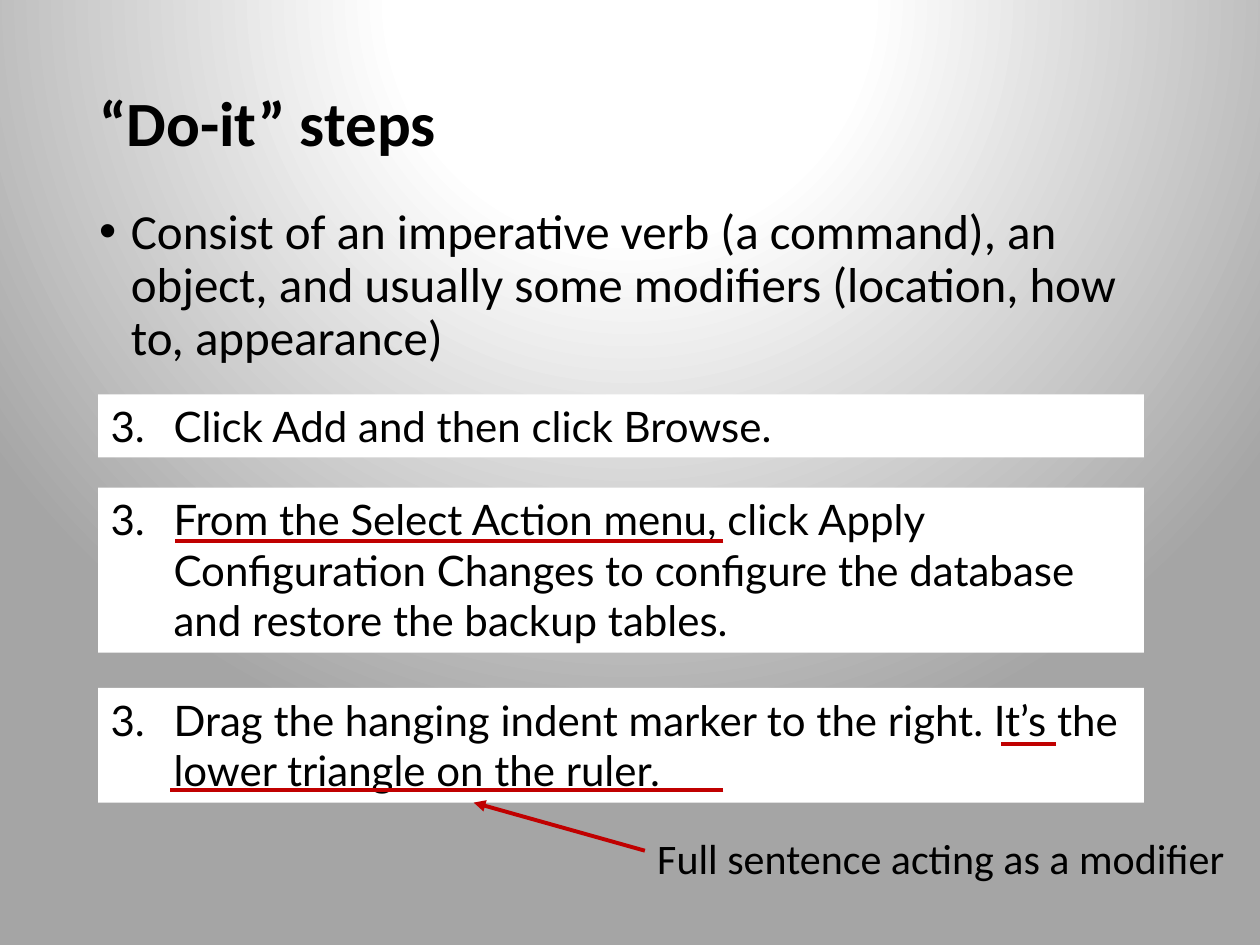
from lxml import etree
from pptx import Presentation
from pptx.dml.color import RGBColor
from pptx.enum.shapes import MSO_CONNECTOR, MSO_SHAPE
from pptx.enum.text import MSO_ANCHOR, PP_ALIGN
from pptx.oxml import parse_xml
from pptx.oxml.ns import nsdecls, qn
from pptx.util import Cm, Pt

BLACK = RGBColor(0x00, 0x00, 0x00)
WHITE = RGBColor(0xFF, 0xFF, 0xFF)
GRAY = RGBColor(0xA5, 0xA5, 0xA5)
RED = RGBColor(0xC0, 0x00, 0x00)
RECTANGLE = MSO_SHAPE.RECTANGLE
STRAIGHT = MSO_CONNECTOR.STRAIGHT
TOP, MIDDLE = MSO_ANCHOR.TOP, MSO_ANCHOR.MIDDLE
LEFT = PP_ALIGN.LEFT


def write_text(shape, text, size, font_name, anchor=TOP, bold=False):
    frame = shape.text_frame
    frame.word_wrap = True
    frame.vertical_anchor = anchor
    paragraph = frame.paragraphs[0]
    paragraph.alignment = LEFT
    run = paragraph.add_run()
    run.text = text
    run.font.size = Pt(size)
    run.font.name = font_name
    run.font.bold = bold
    run.font.color.rgb = BLACK
    return paragraph


def add_marker(paragraph, indent, tag, **attributes):
    properties = paragraph._p.get_or_add_pPr()
    properties.set("marL", str(indent))
    properties.set("indent", str(-indent))
    etree.SubElement(properties, qn("a:buFont"), typeface="Arial" if tag == "a:buChar" else "+mj-lt")
    etree.SubElement(properties, qn(tag), **attributes)


presentation = Presentation()
presentation.slide_width = Cm(25.4)
presentation.slide_height = Cm(19.05)
slide = presentation.slides.add_slide(presentation.slide_layouts[6])

slide.background.fill.gradient()
gradient = slide._element.find(".//" + qn("a:gradFill"))
stops = "".join(
    f'<a:gs pos="{position * 1000}"><a:srgbClr val="{color}"/></a:gs>'
    for position, color in [(0, WHITE), (30, WHITE), (100, GRAY)]
)
gradient.getparent().replace(gradient, parse_xml(
    f'<a:gradFill {nsdecls("a")} rotWithShape="1"><a:gsLst>{stops}</a:gsLst>'
    '<a:path path="circle"><a:fillToRect l="50000" t="-80000" r="50000" b="180000"/></a:path>'
    '</a:gradFill>'
))

title = slide.shapes.add_textbox(Cm(1.75), Cm(1.02), Cm(21.9), Cm(3.05))
paragraph = write_text(title, "“Do-it” steps", 36, "Calibri", MIDDLE, True)
paragraph.line_spacing = 0.9

body = slide.shapes.add_textbox(Cm(1.75), Cm(4.06), Cm(21.9), Cm(3.7))
paragraph = write_text(
    body,
    "Consist of an imperative verb (a command), an object, and usually some modifiers "
    "(location, how to, appearance)",
    28, "Calibri",
)
paragraph.line_spacing = 0.9
paragraph.space_before = Pt(10)
add_marker(paragraph, Cm(0.64), "a:buChar", char="•")

note = slide.shapes.add_textbox(Cm(13), Cm(16.66), Cm(12.07), Cm(1.07))
write_text(note, "Full sentence acting as a modifier", 24, "Calibri")

steps = [
    (7.95, 1.27, "Click Add and then click Browse."),
    (9.83, 3.33, "From the Select Action menu, click Apply Configuration Changes "
                 "to configure the database and restore the backup tables."),
    (13.87, 2.31, "Drag the hanging indent marker to the right. It’s the lower triangle on the ruler."),
]
for top, height, text in steps:
    box = slide.shapes.add_shape(RECTANGLE, Cm(1.98), Cm(top), Cm(21.08), Cm(height))
    box.shadow.inherit = False
    box.fill.solid()
    box.fill.fore_color.rgb = WHITE
    box.line.fill.background()
    paragraph = write_text(box, text, 24, "Lato")
    add_marker(paragraph, Cm(1.27), "a:buAutoNum", type="arabicPeriod", startAt="3")

lines = [
    (14.58, 10.9, 3.53, 10.9, False),
    (21.29, 14.99, 20.17, 14.99, False),
    (14.58, 15.93, 3.43, 15.93, False),
    (13, 17.15, 9.55, 16.18, True),
]
for start_x, start_y, end_x, end_y, has_arrow in lines:
    connector = slide.shapes.add_connector(STRAIGHT, Cm(start_x), Cm(start_y), Cm(end_x), Cm(end_y))
    connector.line.color.rgb = RED
    connector.line.width = Pt(2.25)
    if has_arrow:
        etree.SubElement(connector.line._get_or_add_ln(), qn("a:tailEnd"), type="triangle")
    etree.SubElement(connector._element.spPr, qn("a:effectLst"))

presentation.save("out.pptx")
